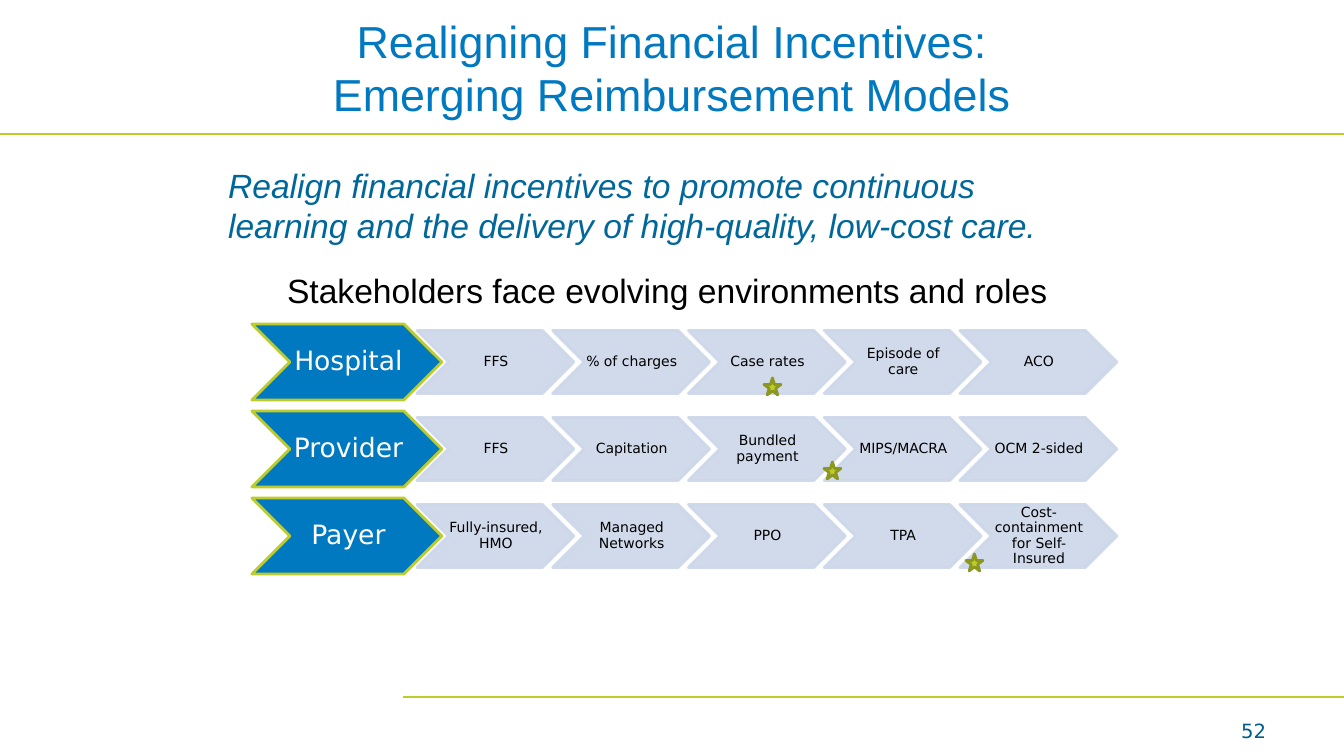
from lxml.etree import SubElement
from pptx import Presentation
from pptx.dml.color import RGBColor
from pptx.enum.shapes import MSO_CONNECTOR, MSO_SHAPE
from pptx.enum.text import MSO_ANCHOR, MSO_AUTO_SIZE, PP_ALIGN
from pptx.oxml.ns import qn
from pptx.util import Pt

TITLE = "Realigning Financial Incentives:\vEmerging Reimbursement Models"
GOAL = ("Realign financial incentives to promote continuous learning "
        "and the delivery of high-quality, low-cost care.")
LEAD = "Stakeholders face evolving environments and roles"
PAGE = "52"
ROWS = {
    "Hospital": ["FFS", "% of charges", "Case rates", "Episode of care", "ACO"],
    "Provider": ["FFS", "Capitation", "Bundled payment", "MIPS/MACRA", "OCM 2-sided"],
    "Payer": ["Fully-insured, HMO", "Managed Networks", "PPO", "TPA",
              "Cost-containment for Self-Insured"],
}
STARS = [(764, 378), (824, 462), (966, 554)]
RULES = [(0, 134), (403, 697)]

COLORS = {
    "blue": "0079C1", "teal": "00679A", "navy": "005C8A", "lime": "BDCC2A",
    "olive": "8C971F", "pale": "CCD7E9", "white": "FFFFFF", "black": "000000",
}

PX = 914400 / 100.8
WIDTH, HEIGHT = 1344, 756
TOP, PITCH = 324, 87
HEAD_X, HEAD_W, HEAD_H = 252, 190, 76
STEP_W, STEP_H = 157, 63
FIRST_X, LAST_X = 417, 960


def px(n):
    return round(n * PX)


def color(name):
    return RGBColor.from_string(COLORS[name])


def place(shape, x, y, w, h):
    shape.left, shape.top, shape.width, shape.height = map(px, (x, y, w, h))


def write(shape, text, size, tint, face="Arial", align=PP_ALIGN.LEFT,
          anchor=MSO_ANCHOR.TOP, italic=False):
    frame = shape.text_frame
    frame.text = text
    frame.word_wrap = True
    frame.auto_size = MSO_AUTO_SIZE.NONE
    frame.vertical_anchor = anchor
    para = frame.paragraphs[0]
    para.alignment = align
    para.space_before = Pt(0)
    for run in para.runs:
        font = run.font
        font.name, font.size, font.italic = face, Pt(size), italic
        font.color.rgb = color(tint)
    return para


def body(holder, box, text, tint, italic=False):
    """Fill a body placeholder as plain text without a bullet."""
    place(holder, *box)
    para = write(holder, text, 24, tint, italic=italic)
    props = para._p.get_or_add_pPr()
    props.set("marL", "0")
    props.set("indent", "0")
    SubElement(props, qn("a:buNone"))


def draw(kind, box, fill, line):
    shape = slide.shapes.add_shape(kind, *map(px, box))
    shape.shadow.inherit = False
    shape.fill.solid()
    shape.fill.fore_color.rgb = color(fill)
    shape.line.color.rgb = color(line)
    shape.line.width = Pt(2)
    return shape


def chevron(box, text, size, fill, line, tint, inset):
    shape = draw(MSO_SHAPE.CHEVRON, box, fill, line)
    para = write(shape, text, size, tint, "DejaVu Sans",
                 PP_ALIGN.CENTER, MSO_ANCHOR.MIDDLE)
    para.line_spacing = 0.9
    frame = shape.text_frame
    frame.margin_left, frame.margin_right = px(inset), 0
    frame.margin_top = frame.margin_bottom = px(1)
    return shape


def fade(shape, percent):
    """Set the opacity of fill and line."""
    for node in shape._element.spPr.iter(qn("a:srgbClr")):
        SubElement(node, qn("a:alpha"), val=str(percent * 1000))


deck = Presentation()
deck.slide_width, deck.slide_height = px(WIDTH), px(HEIGHT)
slide = deck.slides.add_slide(deck.slide_layouts[3])
title, goal, lead = slide.placeholders

for x, y in RULES:
    rule = slide.shapes.add_connector(
        MSO_CONNECTOR.STRAIGHT, *map(px, (x, y, WIDTH, y)))
    rule.line.color.rgb = color("lime")
    rule.line.width = Pt(1)
    SubElement(rule._element.spPr, qn("a:effectLst"))

place(title, 67, 25, 1210, 101)
write(title, TITLE, 32, "blue", align=PP_ALIGN.CENTER, anchor=MSO_ANCHOR.BOTTOM)
body(goal, (218, 160, 857, 176), GOAL, "teal", italic=True)
body(lead, (277, 265, 815, 54), LEAD, "black")

for r, (role, steps) in enumerate(ROWS.items()):
    y = TOP + r * PITCH
    chevron((HEAD_X, y, HEAD_W, HEAD_H), role, 19, "blue", "lime", "white", 3)
    gap = (LAST_X - FIRST_X) / (len(steps) - 1)
    for i, step in enumerate(steps):
        box = (FIRST_X + i * gap, y + (HEAD_H - STEP_H) / 2, STEP_W, STEP_H)
        fade(chevron(box, step, 10, "pale", "pale", "black", 1), 90)

for x, y in STARS:
    draw(MSO_SHAPE.STAR_5_POINT, (x, y, 17, 17), "lime", "olive")

number = slide.shapes.add_textbox(*map(px, (1142, 714, 134, 42)))
write(number, PAGE, 14, "navy", "DejaVu Sans", PP_ALIGN.RIGHT)

deck.save("out.pptx")
